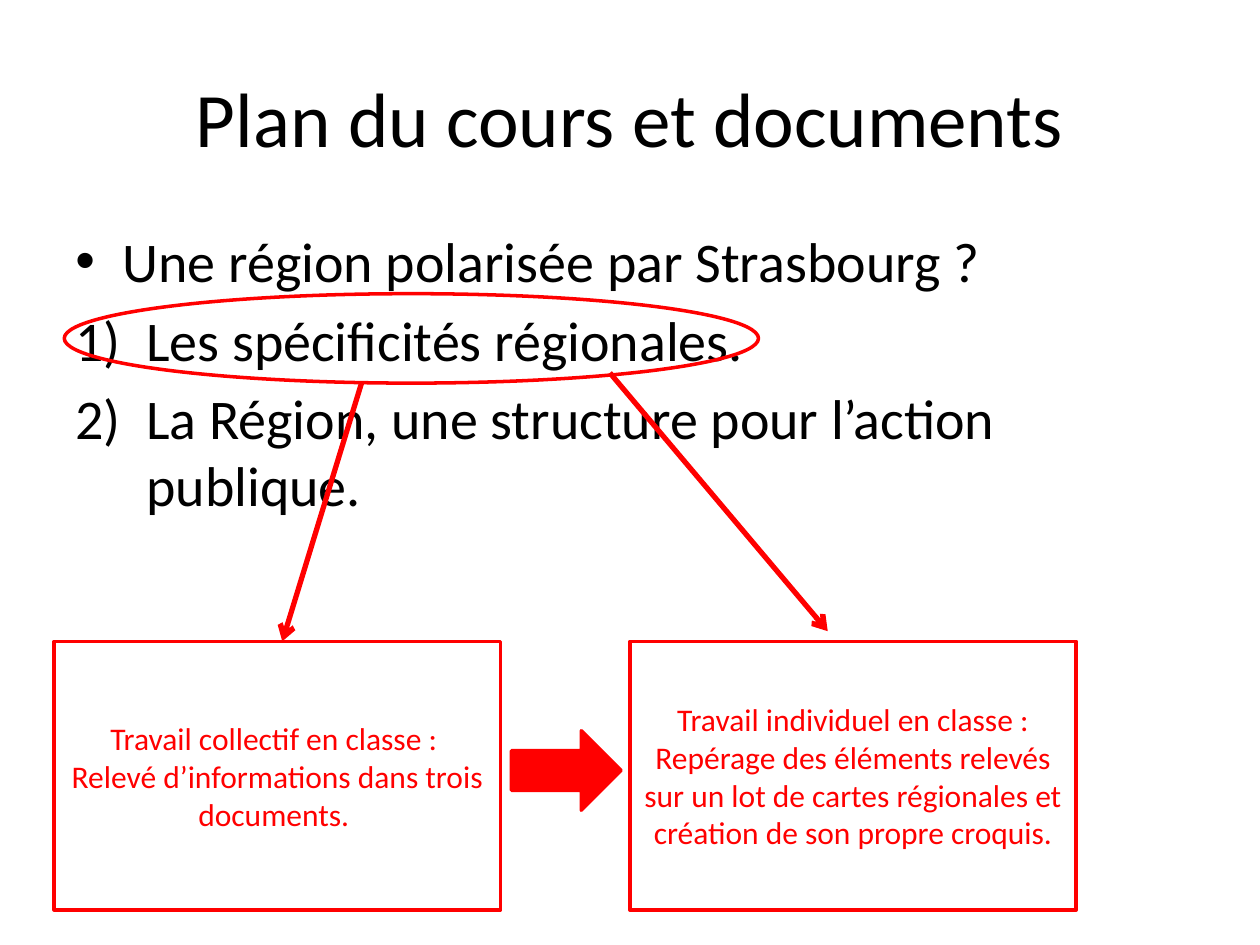
"""Build the course plan slide with its two class activities."""
from lxml import etree
from pptx import Presentation
from pptx import util as u
from pptx.dml.color import RGBColor
from pptx.enum import shapes, text
from pptx.oxml.ns import qn

RED = "FF0000"
BLACK = "000000"
FONT = "Calibri"
ACTIVITY_TOP, ACTIVITY_WIDTH, ACTIVITY_HEIGHT = 366.5, 255, 153.5


def color(value):
    """Turn a hex string into a colour."""
    return RGBColor.from_string(value)


def points(*values):
    """Turn numbers into lengths in points."""
    return [u.Pt(value) for value in values]


def add_span(para, words, size, ink):
    """Add one styled run to a paragraph."""
    span = para.add_run()
    span.text = words
    span.font.name = FONT
    span.font.size = u.Pt(size)
    span.font.color.rgb = color(ink)


def fill_text(frame, lines, size, ink, align, anchor):
    """Write lines as paragraphs and return the paragraphs."""
    frame.word_wrap = True
    frame.vertical_anchor = anchor
    for index, words in enumerate(lines):
        para = frame.paragraphs[0] if index == 0 else frame.add_paragraph()
        para.alignment = align
        add_span(para, words, size, ink)
    return frame.paragraphs


def add_title(page, words):
    """Add the centred slide title."""
    box = page.shapes.add_textbox(*points(36, 21.6, 648, 90))
    fill_text(box.text_frame, [words], 44, BLACK,
              text.PP_ALIGN.CENTER, text.MSO_ANCHOR.MIDDLE)


def set_marker(para, indent, tag, **attributes):
    """Give a paragraph a hanging bullet or number."""
    properties = para._p.get_or_add_pPr()
    properties.set("marL", str(u.Pt(indent)))
    properties.set("indent", str(-u.Pt(indent)))
    etree.SubElement(properties, qn("a:buFont"), typeface="Arial" if tag == "a:buChar" else "+mj-lt")
    etree.SubElement(properties, qn(tag), **attributes)


def add_plan(page, question, parts):
    """Add the bulleted question and its numbered parts."""
    box = page.shapes.add_textbox(*points(36, 126, 648, 356.4))
    paras = fill_text(box.text_frame, [question, *parts], 32, BLACK,
                      text.PP_ALIGN.LEFT, text.MSO_ANCHOR.TOP)
    set_marker(paras[0], 27, "a:buChar", char="•")
    for para in paras[1:]:
        set_marker(para, 40.5, "a:buAutoNum", type="arabicParenR")
        para.space_before = u.Pt(6.4)


def add_red_shape(page, kind, place, filled=False):
    """Add a preset shape with a red outline."""
    shape = page.shapes.add_shape(kind, *points(*place))
    shape.shadow.inherit = False
    shape.line.color.rgb = color(RED)
    shape.line.width = u.Pt(2)
    if filled:
        shape.fill.solid()
        shape.fill.fore_color.rgb = color(RED)
    else:
        shape.fill.background()
    return shape


def add_activity(page, left, lines):
    """Add a framed class activity."""
    place = (left, ACTIVITY_TOP, ACTIVITY_WIDTH, ACTIVITY_HEIGHT)
    box = add_red_shape(page, shapes.MSO_SHAPE.RECTANGLE, place)
    fill_text(box.text_frame, lines, 18, RED,
              text.PP_ALIGN.CENTER, text.MSO_ANCHOR.MIDDLE)


def add_arrow(page, start, end):
    """Add a red line with an open arrowhead at its end."""
    arrow = page.shapes.add_connector(
        shapes.MSO_CONNECTOR.STRAIGHT, *points(*start, *end))
    arrow.line.color.rgb = color(RED)
    arrow.line.width = u.Pt(3)
    etree.SubElement(arrow.line._get_or_add_ln(), qn("a:tailEnd"), type="arrow")
    etree.SubElement(arrow._element.spPr, qn("a:effectLst"))


def main():
    """Build and save the slide."""
    deck = Presentation()
    deck.slide_width, deck.slide_height = points(720, 540)
    page = deck.slides.add_slide(deck.slide_layouts[6])
    add_title(page, "Plan du cours et documents")
    add_plan(page, "Une région polarisée par Strasbourg ?", [
        "Les spécificités régionales.",
        "La Région, une structure pour l’action publique.",
    ])
    add_red_shape(page, shapes.MSO_SHAPE.OVAL, (36.7, 167.8, 396.7, 51.1))
    add_arrow(page, (206.6, 218.9), (161.3, 366.5))
    add_arrow(page, (348.5, 213.1), (473, 360.7))
    add_activity(page, 31, [
        "Travail collectif en classe : ",
        "Relevé d’informations dans trois documents. ",
    ])
    add_activity(page, 360, [
        "Travail individuel en classe : Repérage des éléments relevés sur un "
        "lot de cartes régionales et création de son propre croquis.",
    ])
    add_red_shape(page, shapes.MSO_SHAPE.RIGHT_ARROW,
                  (292.3, 417.6, 62.6, 45.4), filled=True)
    deck.save("out.pptx")


if __name__ == "__main__":
    main()
